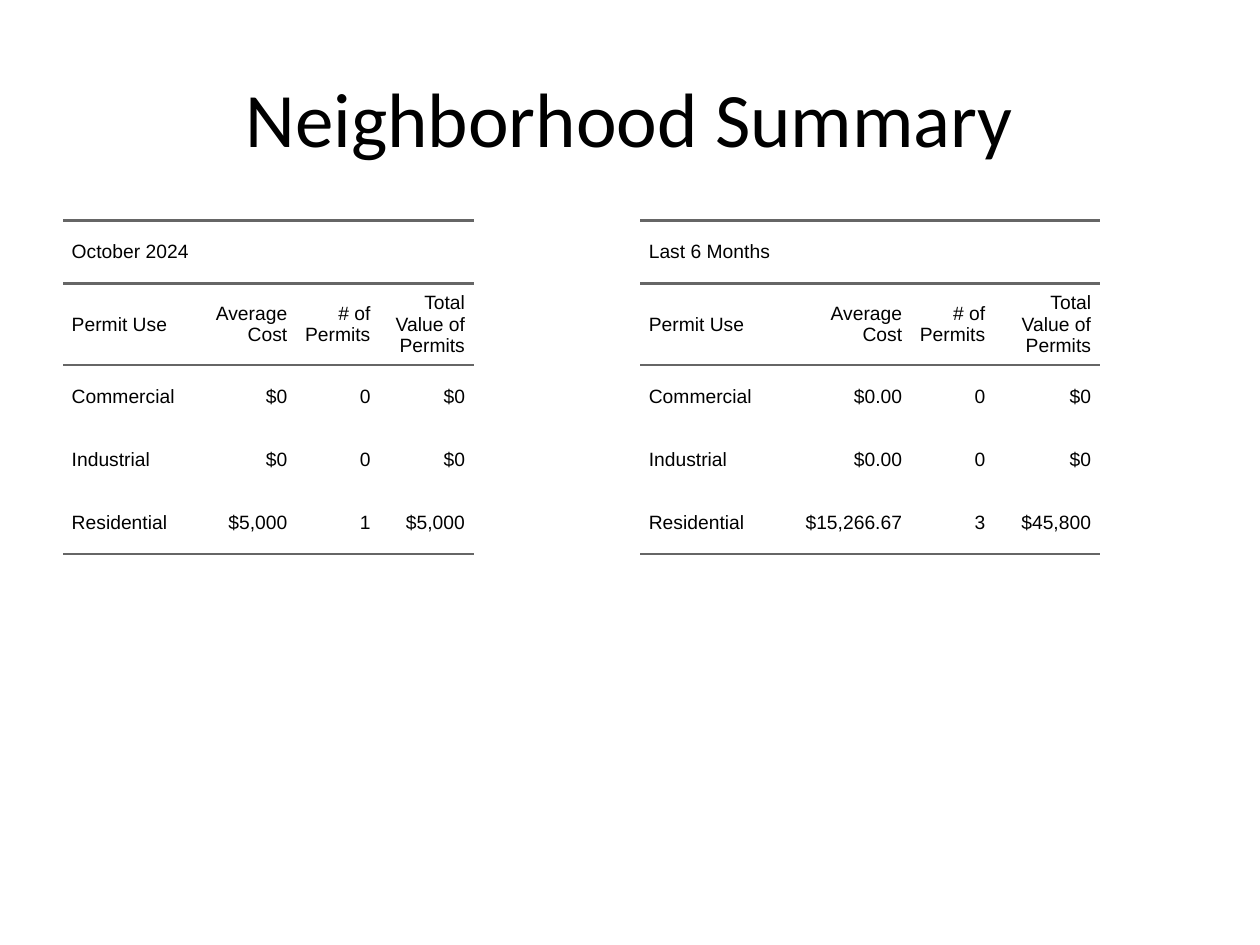
from dataclasses import dataclass

from lxml import etree
from pptx import Presentation
from pptx.dml.color import RGBColor
from pptx.enum.text import MSO_ANCHOR, PP_ALIGN
from pptx.oxml.ns import qn
from pptx.util import Pt

LEFT, CENTER, RIGHT = PP_ALIGN.LEFT, PP_ALIGN.CENTER, PP_ALIGN.RIGHT
MIDDLE = MSO_ANCHOR.MIDDLE
TITLE_ONLY = 5
NO_TABLE_STYLE = "{2D5ABB26-0587-4C30-8999-92F81FD0307C}"


@dataclass(frozen=True)
class Theme:
    text: RGBColor = RGBColor(0, 0, 0)
    rule: str = "666666"
    rule_width: float = 1.5
    title_font: str = "Calibri"
    title_size: float = 44
    table_font: str = "Arial"
    table_size: float = 11
    padding: float = 5


THEME = Theme()

# Table content
HEADER = ["Permit Use", "Average Cost", "# of Permits", "Total Value of Permits"]
OCTOBER = [
    ["Commercial", "$0", "0", "$0"],
    ["Industrial", "$0", "0", "$0"],
    ["Residential", "$5,000", "1", "$5,000"],
]
SIX_MONTHS = [
    ["Commercial", "$0.00", "0", "$0"],
    ["Industrial", "$0.00", "0", "$0"],
    ["Residential", "$15,266.67", "3", "$45,800"],
]

# Geometry in points
TABLE_TOP, TABLE_WIDTH, TABLE_HEIGHT, ROW_HEIGHT = 126, 318.24, 356.4, 36


def apply_format(target, values):
    for name, value in values.items():
        setattr(target, name, value)


def format_text(paragraph, font, size, alignment):
    paragraph.alignment = alignment
    apply_format(paragraph.font, {"name": font, "size": Pt(size)})
    paragraph.font.color.rgb = THEME.text


def add_title(slide, text):
    title = slide.shapes.title
    apply_format(title, {"left": Pt(36), "top": Pt(21.6),
                         "width": Pt(648), "height": Pt(90)})
    title.text_frame.text = text
    title.text_frame.vertical_anchor = MIDDLE
    format_text(title.text_frame.paragraphs[0], THEME.title_font,
                THEME.title_size, CENTER)


def add_rule(cell, side):
    properties = cell._tc.get_or_add_tcPr()
    line = etree.SubElement(properties, qn(f"a:ln{side}"),
                            w=str(Pt(THEME.rule_width)))
    fill = etree.SubElement(line, qn("a:solidFill"))
    etree.SubElement(fill, qn("a:srgbClr"), val=THEME.rule)


def fill_cell(cell, text, alignment, sides):
    for side in sides:
        add_rule(cell, side)
    cell.fill.background()
    padding = Pt(THEME.padding)
    apply_format(cell, {"text": text, "vertical_anchor": MIDDLE,
                        "margin_left": 0, "margin_right": 0,
                        "margin_top": padding, "margin_bottom": padding})
    paragraph = cell.text_frame.paragraphs[0]
    apply_format(paragraph, {"space_before": padding, "space_after": padding})
    format_text(paragraph, THEME.table_font, THEME.table_size, alignment)
    # Side padding comes from the paragraph margins
    for margin in ("marL", "marR"):
        paragraph._p.get_or_add_pPr().set(margin, str(padding))


def add_permit_table(slide, left, column_widths, period, records):
    rows = [[period, "", "", ""], HEADER, *records]
    frame = slide.shapes.add_table(len(rows), len(HEADER), Pt(left),
                                   Pt(TABLE_TOP), Pt(TABLE_WIDTH),
                                   Pt(TABLE_HEIGHT))
    table = frame.table
    apply_format(table, {"first_row": False, "horz_banding": False})
    table._tbl.tblPr.find(qn("a:tableStyleId")).text = NO_TABLE_STYLE
    for column, width in zip(table.columns, column_widths):
        column.width = Pt(width)
    for row in table.rows:
        row.height = Pt(ROW_HEIGHT)
    apply_format(frame, {"width": Pt(TABLE_WIDTH), "height": Pt(TABLE_HEIGHT)})

    # The two heading rows are ruled above and below, the last row below
    rules = {0: "TB", 1: "TB", len(rows) - 1: "B"}
    for row_index, values in enumerate(rows):
        for column_index, text in enumerate(values):
            fill_cell(table.cell(row_index, column_index), text,
                      RIGHT if column_index else LEFT,
                      rules.get(row_index, ""))
    table.cell(0, 0).merge(table.cell(0, len(HEADER) - 1))


def main():
    presentation = Presentation()
    apply_format(presentation, {"slide_width": Pt(720), "slide_height": Pt(540)})
    slide = presentation.slides.add_slide(presentation.slide_layouts[TITLE_ONLY])

    # Two summaries side by side under the title
    add_permit_table(slide, 36, [79.2, 54, 47.52, 54], "October 2024", OCTOBER)
    add_permit_table(slide, 365.76, [79.2, 75.6, 47.52, 60.48],
                     "Last 6 Months", SIX_MONTHS)
    add_title(slide, "Neighborhood Summary")

    presentation.save("out.pptx")


if __name__ == "__main__":
    main()
